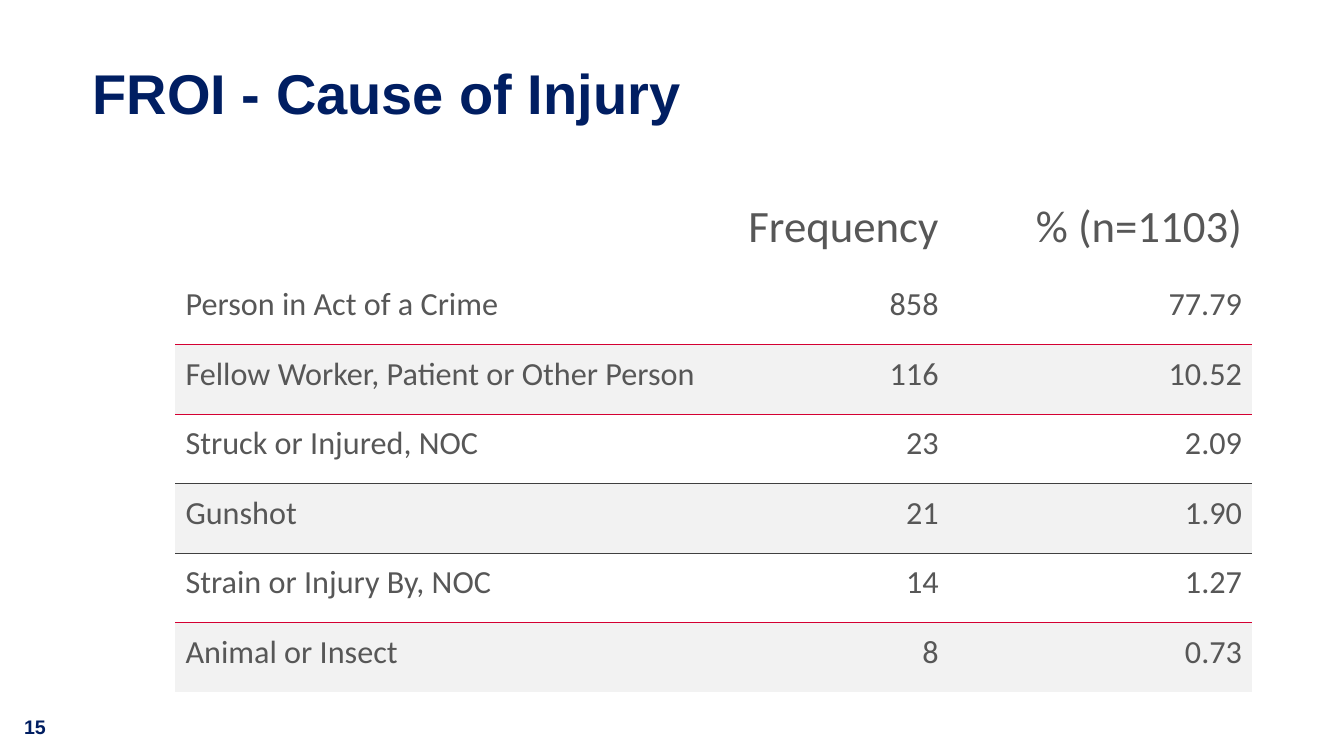
import pptx
import pptx.util
import pptx.dml.color
import pptx.enum.text
import pptx.oxml
import pptx.oxml.ns

Inches = pptx.util.Inches
Align = pptx.enum.text.PP_ALIGN
Anchor = pptx.enum.text.MSO_ANCHOR

TITLE = "FROI - Cause of Injury"
PAGE = "15"
ROWS = [
    ("", "Frequency", "% (n=1103)"),
    ("Person in Act of a Crime", "858", "77.79"),
    ("Fellow Worker, Patient or Other Person", "116", "10.52"),
    ("Struck or Injured, NOC", "23", "2.09"),
    ("Gunshot", "21", "1.90"),
    ("Strain or Injury By, NOC", "14", "1.27"),
    ("Animal or Insect", "8", "0.73"),
]
WIDTHS = (5.5, 2.17, 3.01)
HEAD, BODY = 0.83, 0.69
THEME = {
    "title": ("Arial", 40, "001E62", True),
    "page": ("Arial", 14, "001E61", True),
    "head": ("Calibri", 32, "575757", False),
    "body": ("Calibri", 23, "575757", False),
    "band": "F2F2F2",
    "rule": "D40032",
    "dark": "404040",
}
RULES = {1: "rule", 3: "dark", 5: "rule"}
PLAIN = "{2D5ABB26-0587-4C30-8999-92F81FD0307C}"


def color(name):
    return pptx.dml.color.RGBColor.from_string(name)


def write(para, text, style):
    face, size, ink, bold = THEME[style]
    run = para.add_run()
    run.text = text
    run.font.name = face
    run.font.size = pptx.util.Pt(size)
    run.font.bold = bold
    run.font.color.rgb = color(ink)


def label(slide, place, text, style, inset):
    frame = slide.shapes.add_textbox(*map(Inches, place)).text_frame
    frame.word_wrap = True
    frame.margin_left = frame.margin_right = Inches(inset)
    frame.margin_top = frame.margin_bottom = Inches(inset / 2)
    write(frame.paragraphs[0], text, style)
    return frame


def border(cell, side, ink):
    line = pptx.oxml.parse_xml(
        f'<a:{side} {pptx.oxml.ns.nsdecls("a")} w="12700"><a:solidFill>'
        f'<a:srgbClr val="{ink}"/></a:solidFill></a:{side}>')
    cell._tc.get_or_add_tcPr().insert(0, line)


def fill(cell, row, col, text):
    cell.margin_left = cell.margin_right = Inches(0.1)
    cell.margin_top, cell.margin_bottom = Inches(0.02), Inches(0.2)
    cell.vertical_anchor = Anchor.BOTTOM
    if row and row % 2 == 0:
        cell.fill.solid()
        cell.fill.fore_color.rgb = color(THEME["band"])
    else:
        cell.fill.background()
    para = cell.text_frame.paragraphs[0]
    para.alignment = Align.RIGHT if col else Align.LEFT
    if text:
        write(para, text, "body" if row else "head")
    for side, key in (("lnB", row), ("lnT", row - 1)):
        if key in RULES:
            border(cell, side, THEME[RULES[key]])


def grid(slide):
    high = HEAD + BODY * (len(ROWS) - 1)
    place = map(Inches, (1.74, 1.9, sum(WIDTHS), high))
    table = slide.shapes.add_table(len(ROWS), len(WIDTHS), *place).table
    table.horz_banding = False
    table._tbl.tblPr.find(pptx.oxml.ns.qn("a:tableStyleId")).text = PLAIN
    for col, width in enumerate(WIDTHS):
        table.columns[col].width = Inches(width)
    for row, texts in enumerate(ROWS):
        table.rows[row].height = Inches(BODY if row else HEAD)
        for col, text in enumerate(texts):
            fill(table.cell(row, col), row, col, text)


def main():
    deck = pptx.Presentation()
    deck.slide_width, deck.slide_height = Inches(13.33), Inches(7.5)
    slide = deck.slides.add_slide(deck.slide_layouts[6])
    label(slide, (0.14, 7.04, 0.66, 0.34), PAGE, "page", 0.1)
    title = label(slide, (0.92, 0.37, 11.49, 1.18), TITLE, "title", 0)
    title.vertical_anchor = Anchor.MIDDLE
    title.paragraphs[0].line_spacing = 0.9
    grid(slide)
    deck.save("out.pptx")


if __name__ == "__main__":
    main()
